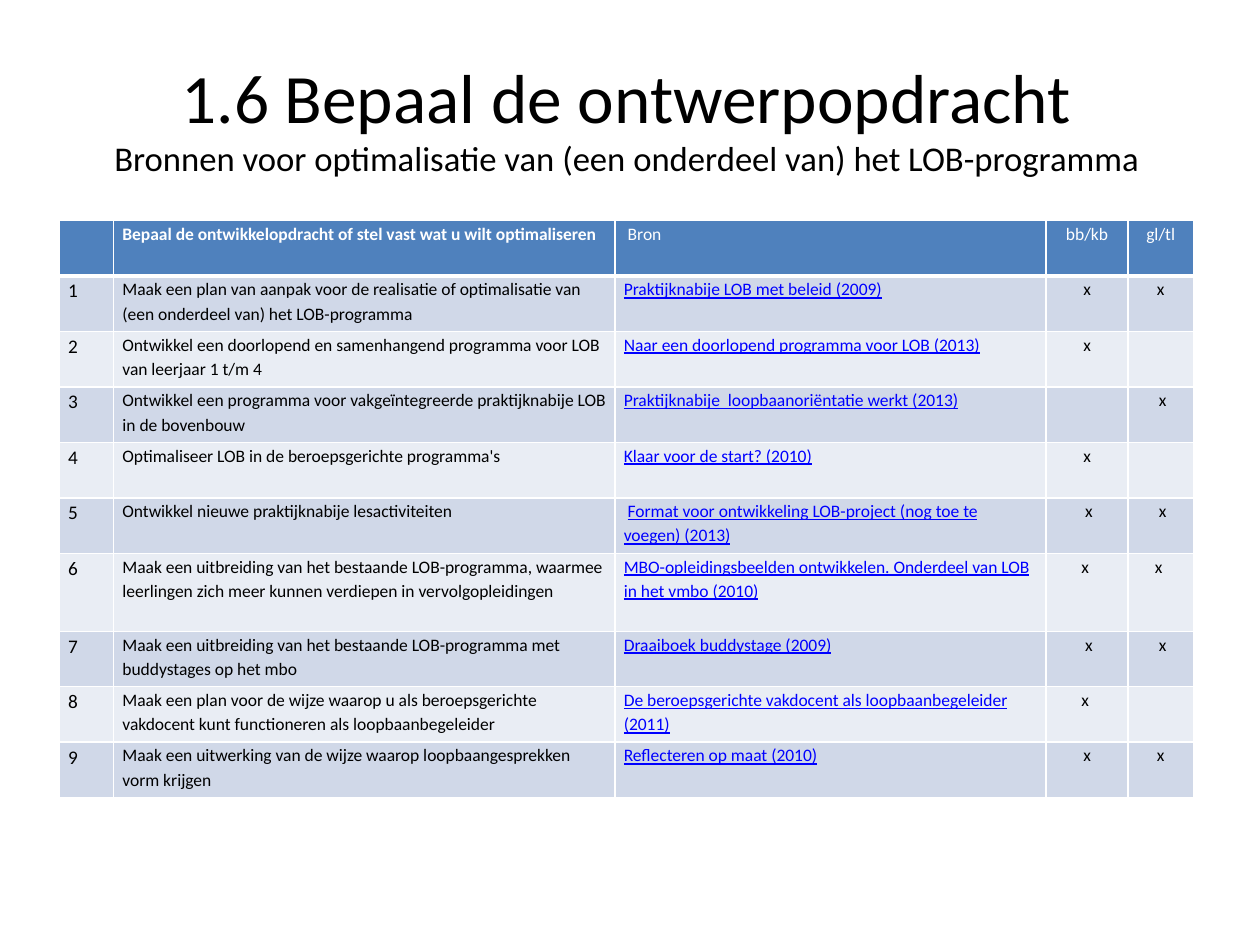
from dataclasses import dataclass

from lxml.etree import SubElement
from pptx import Presentation
from pptx.dml.color import RGBColor
from pptx.enum.text import MSO_ANCHOR as Anchor, MSO_AUTO_SIZE as AutoSize, PP_ALIGN as Align
from pptx.oxml.ns import qn
from pptx.util import Pt

FONT = "Calibri"
COLORS = {
    "header": "4F81BD",
    "odd": "D0D8E8",
    "even": "E9EDF4",
    "text": "000000",
    "link": "0000FF",
    "white": "FFFFFF",
}
LEFT, TABLE_TOP, WIDTH = 34, 126, 648
COLUMN_WIDTHS = [31, 286.5, 246.3, 46.8, 37.4]
ROW_HEIGHT, TALL_ROW_HEIGHT, TALL_ROW = 31.7, 44.6, 6
HEADINGS = [
    "",
    "Bepaal de ontwikkelopdracht of stel vast wat u wilt optimaliseren",
    " Bron",
    "bb/kb",
    "gl/tl",
]


@dataclass
class Assignment:
    task: str
    source: str
    bb_kb: str = ""
    gl_tl: str = ""
    source_lead: str = ""


@dataclass
class Style:
    size: float = 10
    color: str = "text"
    bold: bool = False
    underline: bool = False
    align: Align = Align.LEFT


ASSIGNMENTS = [
    Assignment("Maak een plan van aanpak voor de realisatie of optimalisatie van "
               "(een onderdeel van) het LOB-programma",
               "Praktijknabije LOB met beleid (2009)", "x", "x"),
    Assignment("Ontwikkel een doorlopend en samenhangend programma voor LOB "
               "van leerjaar 1 t/m 4",
               "Naar een doorlopend programma voor LOB (2013)", "x"),
    Assignment("Ontwikkel een programma voor vakgeïntegreerde praktijknabije "
               "LOB in de bovenbouw",
               "Praktijknabije  loopbaanoriëntatie werkt (2013)", "", " x"),
    Assignment("Optimaliseer LOB in de beroepsgerichte programma's",
               "Klaar voor de start? (2010)", "x"),
    Assignment("Ontwikkel nieuwe praktijknabije lesactiviteiten",
               "Format voor ontwikkeling LOB-project (nog toe te voegen) (2013)",
               " x", " x", source_lead=" "),
    Assignment("Maak een uitbreiding van het bestaande LOB-programma, waarmee "
               "leerlingen zich meer kunnen verdiepen in vervolgopleidingen",
               "MBO-opleidingsbeelden ontwikkelen. Onderdeel van LOB in het vmbo (2010)",
               "x ", "x "),
    Assignment("Maak een uitbreiding van het bestaande LOB-programma met "
               "buddystages op het mbo",
               "Draaiboek buddystage (2009)", " x", " x"),
    Assignment("Maak een plan voor de wijze waarop u als beroepsgerichte "
               "vakdocent kunt functioneren als loopbaanbegeleider",
               "De beroepsgerichte vakdocent als loopbaanbegeleider (2011)", "x "),
    Assignment("Maak een uitwerking van de wijze waarop loopbaangesprekken vorm krijgen",
               "Reflecteren op maat (2010)", "x", "x"),
]


def format_run(run, style: Style) -> None:
    font = run.font
    font.name, font.size = FONT, Pt(style.size)
    font.bold, font.underline = style.bold, style.underline
    font.color.rgb = RGBColor.from_string(COLORS[style.color])


def set_borders(cell, bottom_width: float) -> None:
    properties = cell._tc.get_or_add_tcPr()
    for side, width in (("L", 1), ("R", 1), ("T", 1), ("B", bottom_width)):
        line = SubElement(properties, qn(f"a:ln{side}"), w=str(Pt(width)))
        fill = SubElement(line, qn("a:solidFill"))
        SubElement(fill, qn("a:srgbClr"), val=COLORS["white"])


def fill_cell(cell, text: str, fill: str, style: Style,
              lead: str = "", bottom_width: float = 1) -> None:
    set_borders(cell, bottom_width)
    cell.fill.solid()
    cell.fill.fore_color.rgb = RGBColor.from_string(COLORS[fill])
    cell.margin_left = cell.margin_right = Pt(5)
    cell.margin_top = cell.margin_bottom = Pt(0)
    if not text:
        return
    paragraph = cell.text_frame.paragraphs[0]
    paragraph.alignment = style.align
    paragraph.line_spacing = 1.15
    paragraph.space_after = Pt(10)
    if lead:
        paragraph.text = lead
        format_run(paragraph.runs[0], Style(style.size))
        paragraph.add_run().text = text
    else:
        paragraph.text = text
    format_run(paragraph.runs[-1], style)


def add_title(slide) -> None:
    title = slide.shapes.title
    title.left, title.top, title.width, title.height = Pt(LEFT), Pt(21.6), Pt(WIDTH), Pt(90)
    frame = title.text_frame
    frame.text = ("1.6 Bepaal de ontwerpopdracht\v"
                  "Bronnen voor optimalisatie van (een onderdeel van) het LOB-programma")
    frame.word_wrap, frame.auto_size = True, AutoSize.NONE
    frame.vertical_anchor = Anchor.MIDDLE
    paragraph = frame.paragraphs[0]
    paragraph.alignment = Align.CENTER
    for run, size in zip(paragraph.runs, (39.6, 19.8)):
        format_run(run, Style(size))


def add_assignment_table(slide) -> None:
    heights = [ROW_HEIGHT] * (len(ASSIGNMENTS) + 1)
    heights[TALL_ROW] = TALL_ROW_HEIGHT
    table = slide.shapes.add_table(len(heights), len(COLUMN_WIDTHS), Pt(LEFT), Pt(TABLE_TOP),
                                   Pt(WIDTH), Pt(sum(heights))).table
    for column, width in zip(table.columns, COLUMN_WIDTHS):
        column.width = Pt(width)
    for row, height in zip(table.rows, heights):
        row.height = Pt(height)

    # Header row
    for index, heading in enumerate(HEADINGS):
        align = Align.CENTER if index > 2 else Align.LEFT
        style = Style(color="white", bold=index == 1, align=align)
        fill_cell(table.cell(0, index), heading, "header", style, bottom_width=3)

    # Numbered assignments in alternating bands
    mark = Style(align=Align.CENTER)
    styles = [Style(11), Style(), Style(color="link", underline=True), mark, mark]
    for number, item in enumerate(ASSIGNMENTS, start=1):
        fill = "odd" if number % 2 else "even"
        texts = [str(number), item.task, item.source, item.bb_kb, item.gl_tl]
        for index, (text, style) in enumerate(zip(texts, styles)):
            lead = item.source_lead if index == 2 else ""
            fill_cell(table.cell(number, index), text, fill, style, lead)


def main() -> None:
    presentation = Presentation()
    presentation.slide_width, presentation.slide_height = Pt(720), Pt(540)
    slide = presentation.slides.add_slide(presentation.slide_layouts[5])
    add_title(slide)
    add_assignment_table(slide)
    presentation.save("out.pptx")


if __name__ == "__main__":
    main()
